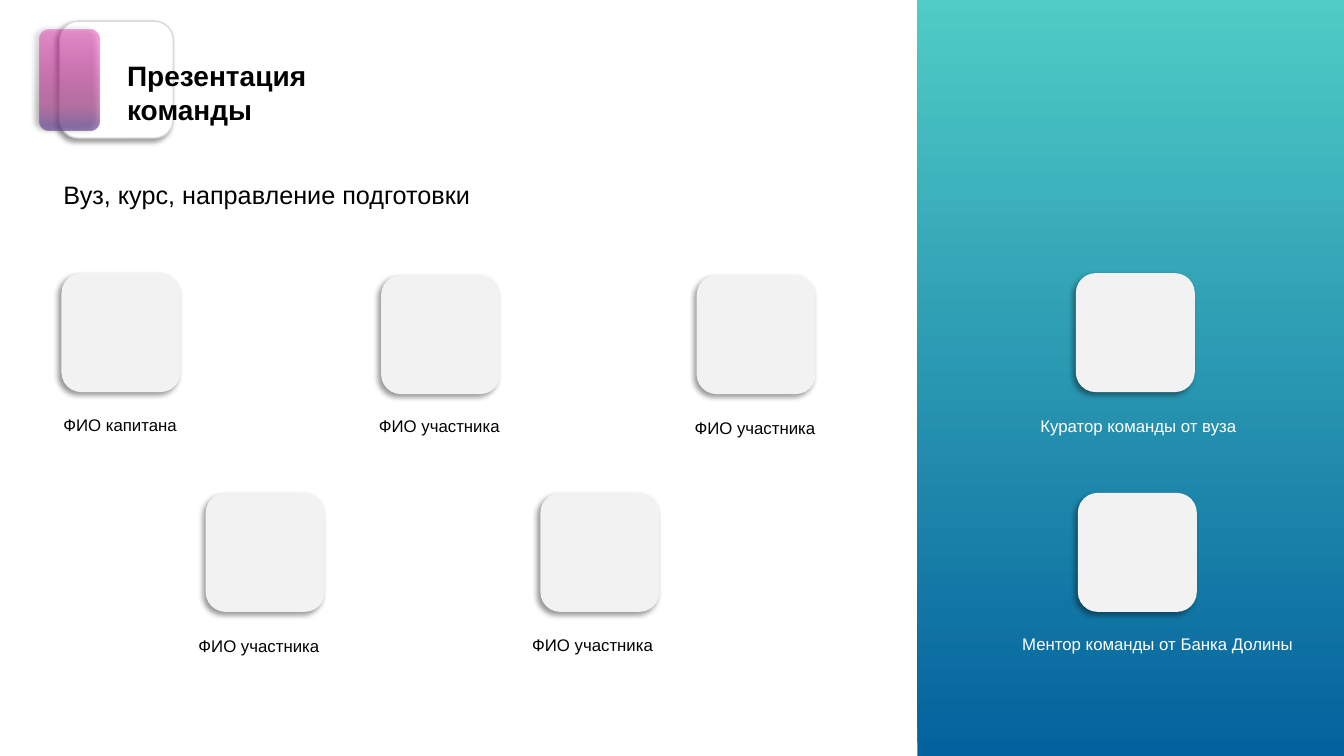
"""Build the team presentation slide with member cards and a mentor panel."""
from lxml.etree import SubElement
from pptx import Presentation
from pptx.dml.color import RGBColor
from pptx.enum.shapes import MSO_SHAPE
from pptx.enum.text import MSO_ANCHOR, MSO_AUTO_SIZE, PP_ALIGN
from pptx.oxml.ns import qn
from pptx.util import Inches, Pt

deck = Presentation()
deck.slide_width, deck.slide_height = Inches(13.33), Inches(7.5)
column, row = deck.slide_width / 13.33, deck.slide_height / 7.5
slide = deck.slides.add_slide(deck.slide_layouts[5])


def add_rounded(left, top, width, height, stops, angle=0, shadow=None):
    """Add a rounded box; one stop is a plain fill, several make a gradient."""
    box = slide.shapes.add_shape(MSO_SHAPE.ROUNDED_RECTANGLE, int(left * column), int(top * row),
                                 int(width * column), int(height * row))
    box.line.fill.background()
    box.shadow.inherit = False
    if len(stops) == 1:
        box.fill.solid()
        box.fill.fore_color.rgb = RGBColor.from_string(stops[0][1])
    else:
        box.fill.gradient()
        gradient = box._element.spPr.find(qn("a:gradFill"))
        for child in list(gradient):
            gradient.remove(child)
        stop_list = SubElement(gradient, qn("a:gsLst"))
        for position, color, opacity in stops:
            stop = SubElement(stop_list, qn("a:gs"), pos=str(position * 1000))
            tint = SubElement(stop, qn("a:srgbClr"), val=color)
            SubElement(tint, qn("a:alpha"), val=str(opacity * 1000))
        SubElement(gradient, qn("a:lin"), ang=str(angle * 60000), scaled="0")
    if shadow is not None:
        effects = box._element.spPr.find(qn("a:effectLst"))
        outer = SubElement(effects, qn("a:outerShdw"), blurRad=str(Pt(4)), dist=str(Pt(3)),
                           dir=str(shadow * 60000), algn="tr", rotWithShape="0")
        tint = SubElement(outer, qn("a:srgbClr"), val="000000")
        SubElement(tint, qn("a:alpha"), val="40000")
    return box


def write_text(box, text, size, color, bold=False, wrap=True):
    """Fill a text box or placeholder with left-aligned Arial text."""
    frame = box.text_frame
    frame.text = text
    frame.word_wrap = wrap
    frame.auto_size = MSO_AUTO_SIZE.NONE
    frame.vertical_anchor = MSO_ANCHOR.TOP
    for para in frame.paragraphs:
        para.alignment = PP_ALIGN.LEFT
        for span in para.runs:
            span.font.name, span.font.size, span.font.bold = "Arial", Pt(size), bold
            span.font.color.rgb = RGBColor.from_string(color)


frame_box = add_rounded(0.59, 0.21, 1.13, 1.16, [(0, "FFFFFF", 100)], shadow=135)
frame_box.line.color.rgb = RGBColor.from_string("D9D9D9")
frame_box.line.width = Pt(1)
add_rounded(0.39, 0.29, 0.6, 1, [(0, "EB00A4", 35), (76, "AF4F93", 68), (95, "6E4895", 68)],
            angle=90, shadow=180)
side_panel = add_rounded(9.1, 0, 4.23, 7.5, [(0, "03629D", 100), (100, "4FCCC6", 100)], angle=270)
side_panel.adjustments[0] = 0

title = slide.shapes.title
title.left, title.top = int(1.16 * column), int(0.53 * row)
title.width, title.height = int(2.9 * column), int(0.77 * row)
write_text(title, "Презентация\nкоманды", 20, "000000", bold=True)
slide.shapes._spTree.append(title._element)

subtitle = slide.shapes.add_textbox(int(0.53 * column), int(1.73 * row), int(6.67 * column), int(0.4 * row))
write_text(subtitle, "Вуз, курс, направление подготовки", 18, "000000")

card_size = 1.18
people = [
    (0.61, 2.71, 0.53, 4.07, 1.65, "ФИО капитана", "000000"),
    (3.78, 2.73, 3.66, 4.08, 1.41, "ФИО участника", "000000"),
    (6.91, 2.73, 6.79, 4.1, 1.41, "ФИО участника", "000000"),
    (2.04, 4.89, 1.87, 6.26, 1.41, "ФИО участника", "000000"),
    (5.36, 4.89, 5.18, 6.25, 1.41, "ФИО участника", "000000"),
    (10.67, 2.71, 10.22, 4.08, 2.16, "Куратор команды от вуза", "FFFFFF"),
    (10.69, 4.89, 10.04, 6.24, 2.86, "Ментор команды от Банка Долины", "FFFFFF"),
]
for card_left, card_top, label_left, label_top, label_width, name, color in people:
    add_rounded(card_left, card_top, card_size, card_size, [(0, "F2F2F2", 100)], shadow=135)
    label = slide.shapes.add_textbox(int(label_left * column), int(label_top * row),
                                     int(label_width * column), int(0.3 * row))
    write_text(label, name, 12, color, wrap=name == "ФИО капитана")

deck.save("out.pptx")
